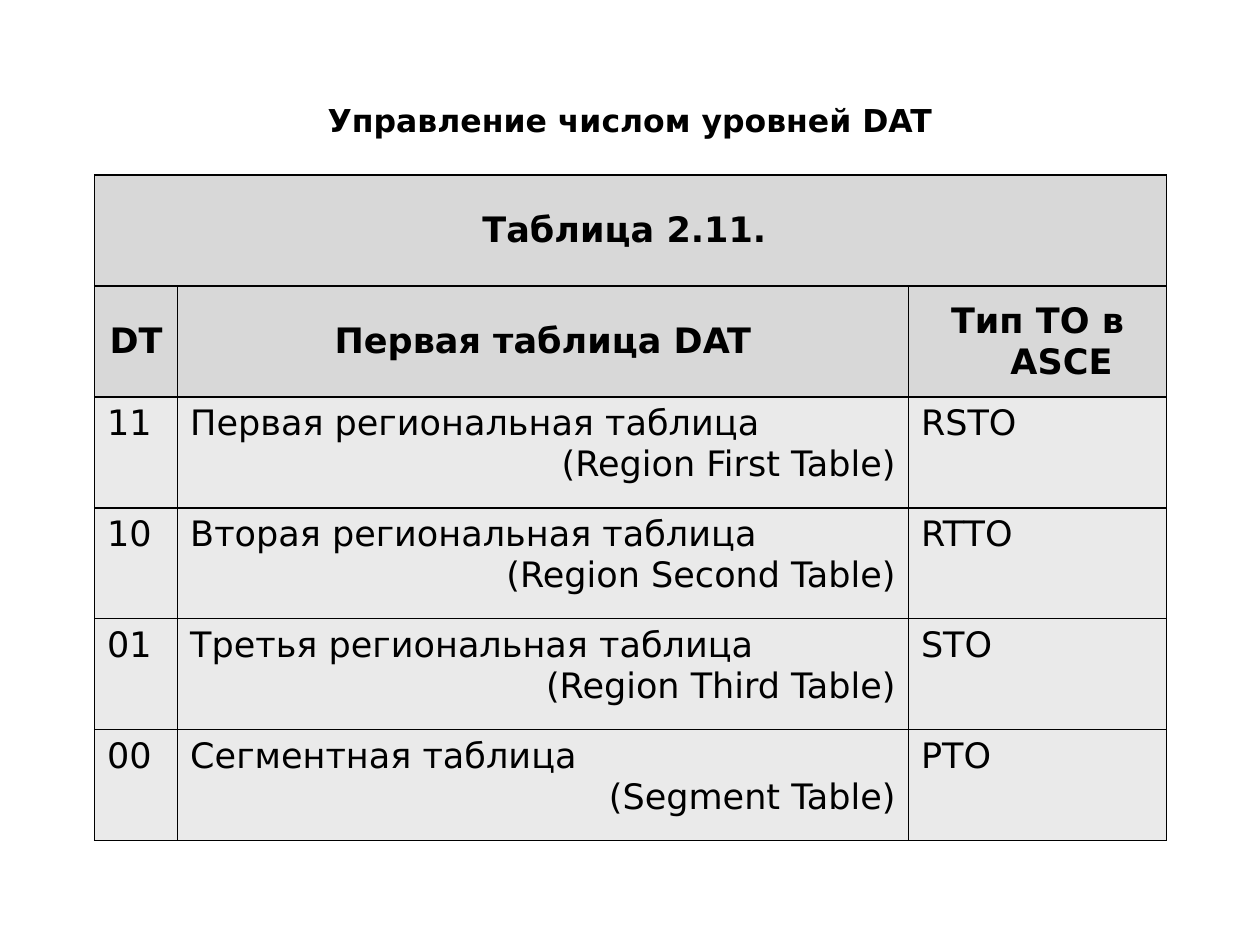
"""Build the slide with the table of DAT level control values."""
from lxml.etree import SubElement
from pptx import Presentation
from pptx.dml.color import RGBColor
from pptx.enum.text import MSO_ANCHOR as Anchor, PP_ALIGN as Align
from pptx.oxml.ns import qn
from pptx.util import Inches, Pt

FONT = "DejaVu Sans"
BLACK, HEAD_FILL, BODY_FILL = "000000", "D8D8D8", "EAEAEA"
TITLE = "Управление числом уровней DAT"
CAPTION = "Таблица 2.11. "
HEADERS = ["DT", "Первая таблица DAT", "Тип TO в ASCE"]
LEVELS = [
    ("11", "Первая региональная таблица", " (Region First Table)", "RSTO"),
    ("10", "Вторая региональная таблица", "(Region Second Table)", "RTTO"),
    ("01", "Третья региональная таблица", "(Region Third Table)", "STO"),
    ("00", "Сегментная таблица", "(Segment Table)", "PTO"),
]
COLS = [0.66, 5.8, 2.05]
ROW_H = 0.88
LEFT, TOP = 0.75, 1.39
INDENT = Inches(0.38)


def color(value):
    return RGBColor.from_string(value)


def write(p, text, size, bold, align):
    p.alignment = align
    r = p.add_run()
    r.text = text
    r.font.name, r.font.size, r.font.bold = FONT, Pt(size), bold
    r.font.color.rgb = color(BLACK)


def add_borders(cell):
    tc_pr = cell._tc.get_or_add_tcPr()
    for side in ("a:lnL", "a:lnR", "a:lnT", "a:lnB"):
        ln = SubElement(tc_pr, qn(side), w=str(Pt(1)))
        SubElement(SubElement(ln, qn("a:solidFill")), qn("a:srgbClr"), val=BLACK)


def fill_cell(cell, lines, head):
    add_borders(cell)
    cell.fill.solid()
    cell.fill.fore_color.rgb = color(HEAD_FILL if head else BODY_FILL)
    cell.vertical_anchor = Anchor.MIDDLE if head else Anchor.TOP
    tf = cell.text_frame
    for i, line in enumerate(lines):
        p = tf.add_paragraph() if i else tf.paragraphs[0]
        align = Align.CENTER if head else Align.RIGHT if i else Align.LEFT
        write(p, line, 20, head, align)
        p_pr = p._p.get_or_add_pPr()
        p_pr.set("marL", str(INDENT))
        p_pr.set("indent", str(-INDENT))


def add_title(s):
    tf = s.shapes.add_textbox(Inches(0.75), Inches(0.67), Inches(8.5), Inches(0.56)).text_frame
    tf.word_wrap = True
    tf.vertical_anchor = Anchor.MIDDLE
    write(tf.paragraphs[0], TITLE, 18, True, Align.CENTER)


def add_levels(s):
    rows = [[[CAPTION], [], []], [[h] for h in HEADERS]]
    rows += [[[dt], [name, english], [kind]] for dt, name, english, kind in LEVELS]
    table = s.shapes.add_table(len(rows), len(COLS), Inches(LEFT), Inches(TOP),
                               Inches(sum(COLS)), Inches(ROW_H * len(rows))).table
    for col, width in zip(table.columns, COLS):
        col.width = Inches(width)
    for i, row in enumerate(rows):
        table.rows[i].height = Inches(ROW_H)
        for j, lines in enumerate(row):
            fill_cell(table.cell(i, j), lines, i < 2)
    table.cell(0, 0).merge(table.cell(0, len(COLS) - 1))


def main():
    prs = Presentation()
    prs.slide_width, prs.slide_height = Inches(10), Inches(7.5)
    s = prs.slides.add_slide(prs.slide_layouts[6])
    add_title(s)
    add_levels(s)
    prs.save("out.pptx")


if __name__ == "__main__":
    main()
